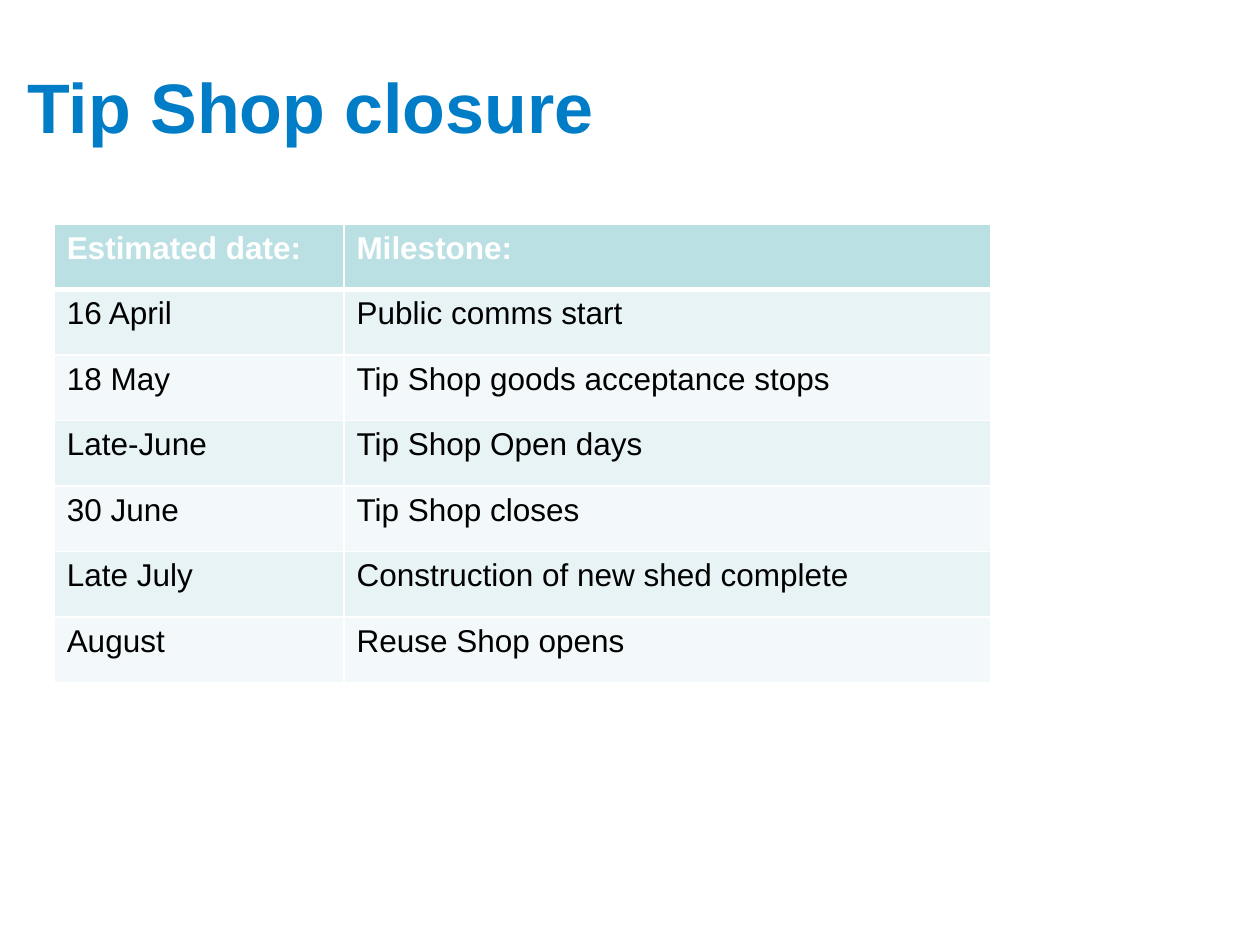
from lxml import etree
from pptx import Presentation
from pptx.dml.color import RGBColor
from pptx.enum.text import MSO_ANCHOR
from pptx.oxml.ns import qn
from pptx.util import Inches, Pt

MIDDLE = MSO_ANCHOR.MIDDLE
WHITE = "FFFFFF"
HEAD = "BBE0E3"
BANDS = ["F3F9FA", "E7F3F4"]


def paint(target, color):
    """Give a fill or a font a solid colour."""
    if hasattr(target, "solid"):
        target.solid()
        target.fore_color.rgb = RGBColor.from_string(color)
    else:
        target.color.rgb = RGBColor.from_string(color)


def write(frame, text, size=18, color="000000", bold=False):
    frame.word_wrap = True
    run = frame.paragraphs[0].add_run()
    run.text = text
    run.font.name = "Arial"
    run.font.size = Pt(size)
    run.font.bold = bold
    paint(run.font, color)


prs = Presentation()
prs.slide_width, prs.slide_height = Inches(10), Inches(7.5)
slide = prs.slides.add_slide(prs.slide_layouts[6])

title = slide.shapes.add_textbox(
    Inches(0.12), Inches(0.21), Inches(9.37), Inches(1.25))
title.text_frame.vertical_anchor = MIDDLE
write(title.text_frame, "Tip Shop closure", size=40, color="007DC6", bold=True)

rows = [
    ("Estimated date:", "Milestone:"),
    ("16 April", "Public comms start"),
    ("18 May", "Tip Shop goods acceptance stops"),
    ("Late-June", "Tip Shop Open days"),
    ("30 June", "Tip Shop closes"),
    ("Late July", "Construction of new shed complete"),
    ("August", "Reuse Shop opens"),
]
widths = [2.3, 5.13]
pitch = 0.52

table = slide.shapes.add_table(
    len(rows), len(widths), Inches(0.43), Inches(1.78),
    Inches(sum(widths)), Inches(pitch * len(rows))).table
for col, width in zip(table.columns, widths):
    col.width = Inches(width)

for r, row in enumerate(rows):
    table.rows[r].height = Inches(pitch)
    first = r == 0
    for c, text in enumerate(row):
        cell = table.cell(r, c)
        write(cell.text_frame, text, bold=first,
              color=WHITE if first else "000000")
        paint(cell.fill, HEAD if first else BANDS[r % 2])
        props = cell._tc.get_or_add_tcPr()
        for i, side in enumerate(["lnL", "lnR", "lnT", "lnB"]):
            # The rule under the header is shared by the first two rows.
            thick = (r, side) in [(0, "lnB"), (1, "lnT")]
            line = etree.Element(qn(f"a:{side}"), w=str(Pt(3 if thick else 1)))
            fill = etree.SubElement(line, qn("a:solidFill"))
            etree.SubElement(fill, qn("a:srgbClr"), val=WHITE)
            props.insert(i, line)

prs.save("out.pptx")
